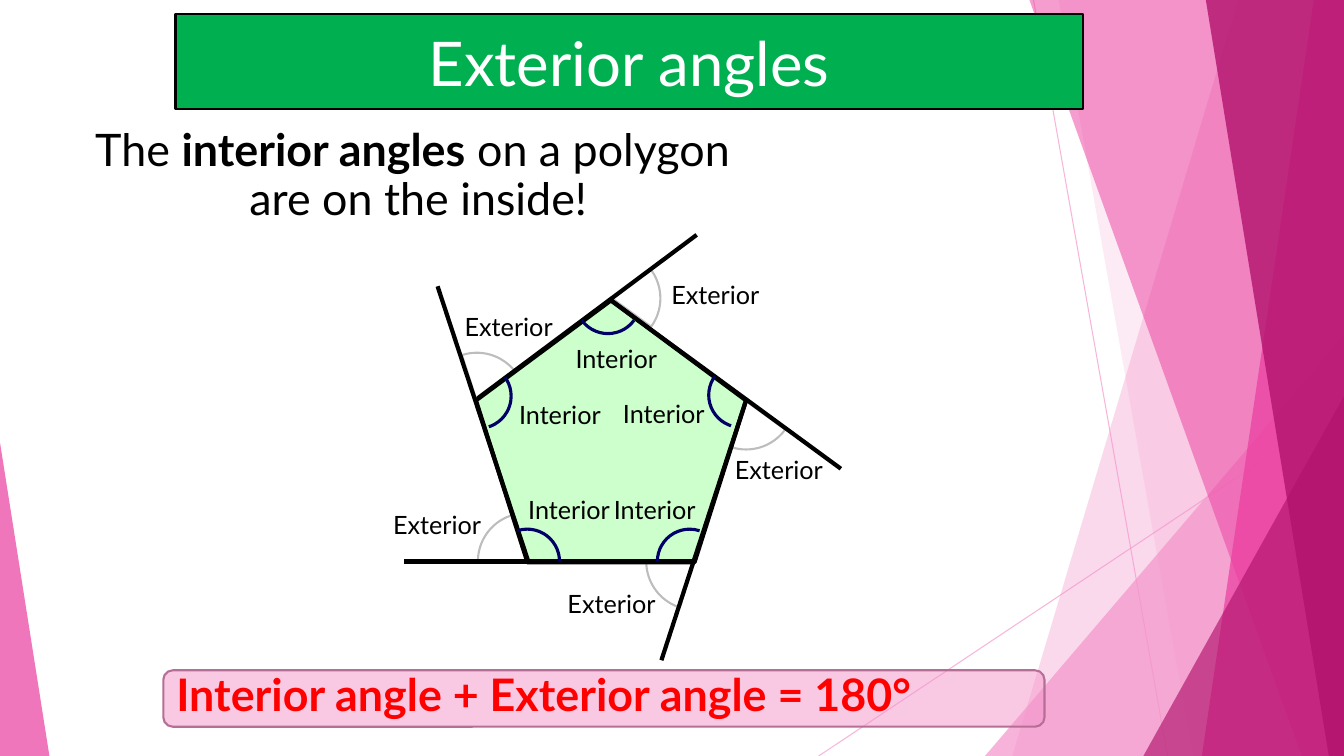
import pptx
import pptx.util
import pptx.dml.color
import pptx.enum.shapes
import pptx.enum.text
import pptx.oxml
import pptx.oxml.ns

PX = 9144  # EMU per px, 100 px to the inch
SHAPE = pptx.enum.shapes.MSO_SHAPE
ALIGN = pptx.enum.text.PP_ALIGN
ANCHOR = pptx.enum.text.MSO_ANCHOR
COLORS = {
    "black": "000000", "white": "FFFFFF", "red": "FF0000", "green": "00B050",
    "mint": "CCFFCC", "navy": "000066", "pale": "F496CB", "pink": "EB3D9F",
    "plum": "B2136D", "mauve": "B56F96",
}
FACETS = [  # colour, opacity in %, corners
    ("pale", 36, [(1228, 0), (1333, 0), (1333, 750), (1004, 750)]),
    ("pale", 20, [(1050, 0), (1333, 0), (1333, 750), (1183, 750)]),
    ("pale", 72, [(1333, 333), (1333, 750), (977, 750)]),
    ("pink", 50, [(1021, 0), (1333, 0), (1333, 750), (1291, 750)]),
    ("pink", 70, [(1303, 0), (1333, 0), (1333, 750), (1192, 750)]),
    ("plum", 80, [(1196, 0), (1333, 0), (1333, 750), (1318, 750)]),
    ("plum", 66, [(1333, 393), (1333, 750), (1134, 750)]),
    ("pink", 70, [(0, 439), (0, 750), (49, 750)]),
]
# Clockwise from bottom left, relative to the diagram box:
# exterior centre, interior centre, ray, interior label, exterior label
CORNERS = [
    ((142, 324), (143, 324), (309, 324, 21, 324), (134, 252), (0, 267)),
    ((93, 165), (95, 160), (144, 324, 54, 51), (125, 158), (71, 71)),
    ((227, 63), (223, 66), (94, 162, 311, 0), (181, 103), (276, 39)),
    ((360, 165), (355, 159), (226, 65, 454, 232), (228, 157), (339, 213)),
    ((309, 324), (304, 324), (360, 164, 276, 422), (219, 252), (173, 346)),
]


def emu(*lengths):
    return [pptx.util.Emu(n * PX) for n in lengths]


def rgb(name):
    return pptx.dml.color.RGBColor.from_string(COLORS[name])


def apply(obj, values):
    for name, value in values.items():
        setattr(obj, name, value)


def set_alpha(el, percent):
    for clr in el.iter(pptx.oxml.ns.qn("a:srgbClr")):
        clr.append(pptx.oxml.parse_xml(
            f'<a:alpha {pptx.oxml.ns.nsdecls("a")} val="{percent * 1000}"/>'))


def paint(sp, fill=None, line=None, width=1.5, fill_alpha=100, line_alpha=100):
    sp.shadow.inherit = False
    spPr = sp._element.spPr
    if fill:
        sp.fill.solid()
        sp.fill.fore_color.rgb = rgb(fill)
        if fill_alpha < 100:
            set_alpha(spPr.find(pptx.oxml.ns.qn("a:solidFill")), fill_alpha)
    else:
        sp.fill.background()
    if line:
        sp.line.color.rgb = rgb(line)
        sp.line.width = pptx.util.Pt(width)
        if line_alpha < 100:
            set_alpha(spPr.find(pptx.oxml.ns.qn("a:ln")), line_alpha)
    else:
        sp.line.fill.background()
    return sp


def add_line(s, ends, color, width, alpha=100):
    sp = s.shapes.add_connector(pptx.enum.shapes.MSO_CONNECTOR.STRAIGHT, *emu(*ends))
    sp.line.color.rgb = rgb(color)
    sp.line.width = pptx.util.Pt(width)
    if alpha < 100:
        set_alpha(sp.line._ln, alpha)
    sp._element.spPr.append(pptx.oxml.parse_xml(
        f'<a:effectLst {pptx.oxml.ns.nsdecls("a")}/>'))


def add_run(p, text, size, color="black", bold=False):
    r = p.add_run()
    r.text = text
    apply(r.font, {"name": "Lato", "size": pptx.util.Pt(size), "bold": bold})
    r.font.color.rgb = rgb(color)


def add_label(s, box, text, size, color="black", bold=False):
    tf = s.shapes.add_textbox(*emu(*box)).text_frame
    tf.word_wrap = True
    add_run(tf.paragraphs[0], text, size, color, bold)


def place(s, sp, box):
    """Move a placeholder to its box, in front of what is drawn so far."""
    apply(sp, dict(zip(("left", "top", "width", "height"), emu(*box))))
    s.shapes._spTree.append(sp._element)
    sp.text_frame.auto_size = pptx.enum.text.MSO_AUTO_SIZE.NONE
    return sp.text_frame


def add_sector(s, preset, centre, radius, start, sweep):
    x, y = centre
    sp = s.shapes.add_shape(preset, *emu(x - radius, y - radius, 2 * radius, 2 * radius))
    for i, angle in enumerate((start, start + sweep)):
        sp.adjustments[i] = angle % 360 * 0.6  # 60000ths of a degree over 100000
    return sp


def backdrop(s, width, height):
    add_line(s, (1025, 0, 1158, height), "pale", 0.75, 70)
    add_line(s, (width, 403, 812, height), "pale", 0.75, 70)
    for color, alpha, points in FACETS:
        fb = s.shapes.build_freeform(*points[0], scale=PX)
        fb.add_line_segments(points[1:], close=True)
        paint(fb.convert_to_shape(), color, fill_alpha=alpha)


def title(s, box):
    sp = s.shapes.title
    tf = place(s, sp, box)
    sp.fill.solid()
    sp.fill.fore_color.rgb = rgb("green")
    sp.line.color.rgb = rgb("black")
    sp.line.width = pptx.util.Pt(1.5)
    tf.vertical_anchor = ANCHOR.MIDDLE
    p = tf.paragraphs[0]
    p.alignment = ALIGN.CENTER
    add_run(p, "Exterior angles", 44, "white")


def statement(s, box):
    tf = place(s, s.placeholders[1], box)
    tf.vertical_anchor = ANCHOR.TOP
    p = tf.paragraphs[0]
    apply(p, {"alignment": ALIGN.CENTER, "line_spacing": 0.9, "space_before": pptx.util.Pt(0)})
    pPr = p._p.get_or_add_pPr()
    for name in ("marL", "indent"):
        pPr.set(name, "0")
    pPr.append(pptx.oxml.parse_xml(f'<a:buNone {pptx.oxml.ns.nsdecls("a")}/>'))
    add_run(p, "The ", 32)
    add_run(p, "interior angles", 32, bold=True)
    add_run(p, " on a polygon ", 32)
    p.add_line_break()
    add_run(p, "are on the inside!", 32)


def diagram(s, left, top):
    def at(point):
        return left + point[0], top + point[1]

    # Exterior angles, 72° each
    for k, corner in enumerate(CORNERS):
        sp = add_sector(s, SHAPE.PIE, at(corner[0]), 48, 180 + 72 * k, 72)
        paint(sp, "white", "black", 1.5, 25, 25)
    # Pentagon and its extended sides
    sp = s.shapes.add_shape(SHAPE.REGULAR_PENTAGON, *emu(*at((92, 65)), 268, 260))
    paint(sp, "mint", "black", 3)
    for corner in CORNERS:
        ray = corner[2]
        add_line(s, at(ray[:2]) + at(ray[2:]), "black", 3)
    # Interior angles, 108° each
    for k, corner in enumerate(CORNERS):
        sp = add_sector(s, SHAPE.ARC, at(corner[1]), 32, 252 + 72 * k, 108)
        paint(sp, line="navy", width=2.25)
    # Angle names
    for corner in CORNERS:
        add_label(s, at(corner[3]) + (104, 40), "Interior", 18)
        add_label(s, at(corner[4]) + (118, 40), "Exterior", 18)


def rule(s, left, top, width, height):
    sp = s.shapes.add_shape(SHAPE.ROUNDED_RECTANGLE, *emu(left, top, width, height))
    paint(sp, "pale", "mauve", 1.5, fill_alpha=52)
    add_label(s, (left + 3, top - 8, width - 3, height + 8),
              "Interior angle + Exterior angle = 180°", 32, "red", True)


def main():
    prs = pptx.Presentation()
    width, height = 1333, 750
    apply(prs, dict(zip(("slide_width", "slide_height"), emu(width, height))))
    s = prs.slides.add_slide(prs.slide_layouts[1])
    backdrop(s, width, height)
    title(s, (174, 14, 900, 94))
    statement(s, (-34, 122, 898, 111))
    diagram(s, 380, 233)
    rule(s, 162, 665, 874, 56)
    prs.save("out.pptx")


if __name__ == "__main__":
    main()
